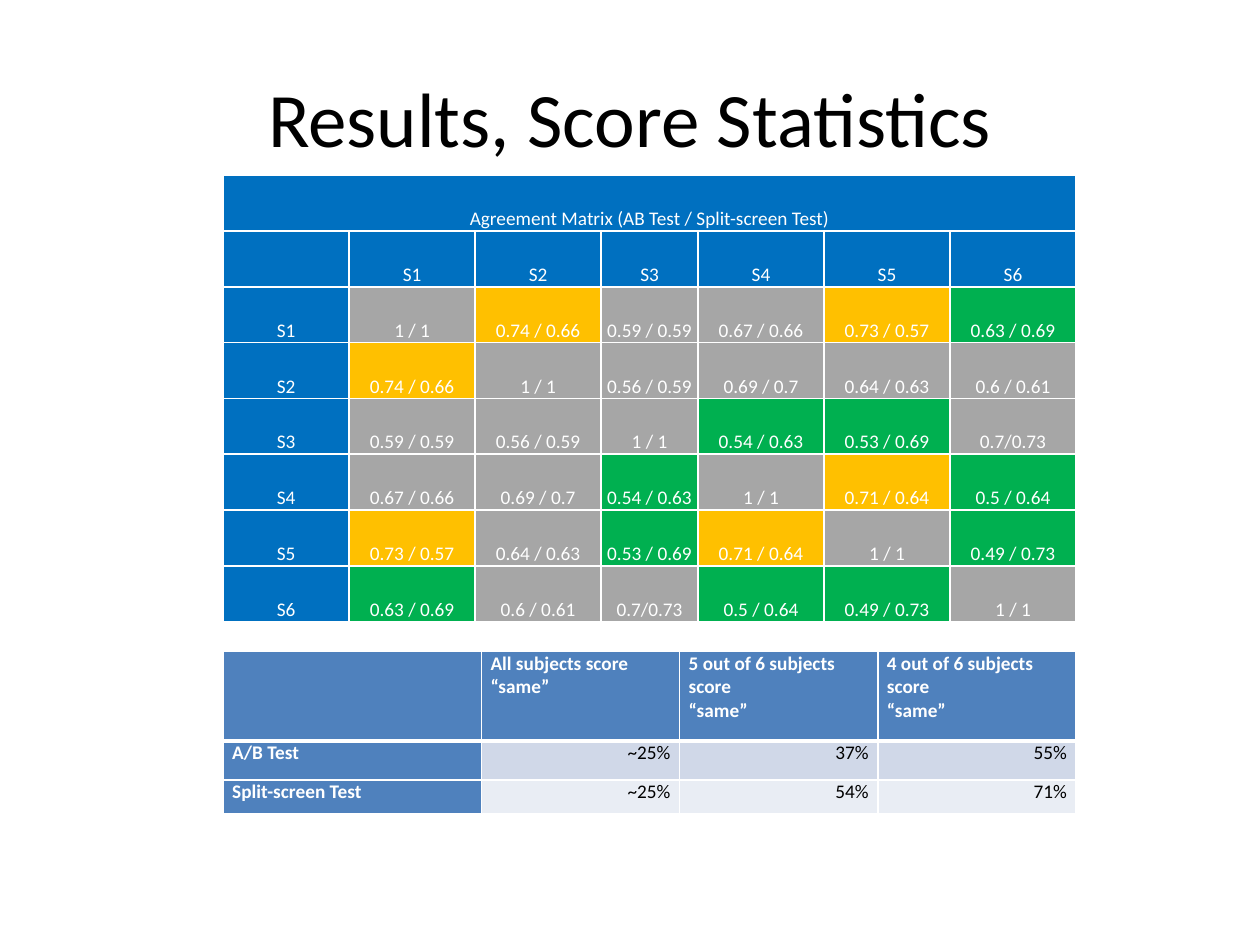
from lxml import etree
from pptx import Presentation
from pptx.dml.color import RGBColor
from pptx.enum import text
from pptx.oxml.ns import qn
from pptx.util import Pt

WHITE = RGBColor(0xFF, 0xFF, 0xFF)
BLACK = RGBColor(0x00, 0x00, 0x00)
BLUE = RGBColor(0x00, 0x70, 0xC0)
GREY = RGBColor(0xA6, 0xA6, 0xA6)
GOLD = RGBColor(0xFF, 0xC0, 0x00)
GREEN = RGBColor(0x00, 0xB0, 0x50)
STEEL = RGBColor(0x4F, 0x81, 0xBD)
BANDS = [RGBColor(0xD0, 0xD8, 0xE8), RGBColor(0xE9, 0xED, 0xF4)]

LEFT, CENTER, RIGHT = (text.PP_ALIGN.LEFT, text.PP_ALIGN.CENTER,
                       text.PP_ALIGN.RIGHT)
TABLE_LEFT = 127.5

SUBJECTS = ["S1", "S2", "S3", "S4", "S5", "S6"]
# Scores above the diagonal; the matrix is symmetric.
AGREEMENT = [
    ["0.74 / 0.66", "0.59 / 0.59", "0.67 / 0.66", "0.73 / 0.57", "0.63 / 0.69"],
    ["0.56 / 0.59", "0.69 / 0.7", "0.64 / 0.63", "0.6 / 0.61"],
    ["0.54 / 0.63", "0.53 / 0.69", "0.7/0.73"],
    ["0.71 / 0.64", "0.5 / 0.64"],
    ["0.49 / 0.73"],
]
SAME_HEADINGS = ["", "All subjects score “same”",
                 "5 out of 6 subjects score\n“same”",
                 "4 out of 6 subjects score\n“same”"]
SAME_SHARES = [["A/B Test", "~25%", "37%", "55%"],
               ["Split-screen Test", "~25%", "54%", "71%"]]


def set_font(paragraph, size, color, bold=False):
    font = paragraph.font
    font.name, font.size, font.bold = "Calibri", Pt(size), bold
    font.color.rgb = color


def add_title(slide, title):
    box = slide.shapes.add_textbox(Pt(36), Pt(21.6), Pt(648), Pt(90))
    frame = box.text_frame
    frame.word_wrap = True
    frame.vertical_anchor = text.MSO_ANCHOR.MIDDLE
    frame.text = title
    frame.paragraphs[0].alignment = CENTER
    set_font(frame.paragraphs[0], 44, BLACK)


def add_grid(slide, top, widths, heights):
    grid = slide.shapes.add_table(
        len(heights), len(widths), Pt(TABLE_LEFT), Pt(top),
        Pt(sum(widths)), Pt(sum(heights))).table
    for column, width in zip(grid.columns, widths):
        column.width = Pt(width)
    for row, height in zip(grid.rows, heights):
        row.height = Pt(height)
    return grid


def set_borders(cell, top=1, bottom=1):
    """Draw white cell edges with widths in points."""
    properties = cell._tc.get_or_add_tcPr()
    edges = [("a:lnL", 1), ("a:lnR", 1), ("a:lnT", top), ("a:lnB", bottom)]
    for position, (tag, width) in enumerate(edges):
        line = etree.Element(qn(tag), w=str(Pt(width)))
        fill = etree.SubElement(line, qn("a:solidFill"))
        etree.SubElement(fill, qn("a:srgbClr"), val=str(WHITE))
        properties.insert(position, line)


def fill_cell(cell, words, fill, color=WHITE, bold=False, align=CENTER,
              anchor=text.MSO_ANCHOR.BOTTOM, side=0.7, upper=0.7):
    cell.fill.solid()
    cell.fill.fore_color.rgb = fill
    cell.margin_left = cell.margin_right = Pt(side)
    cell.margin_top, cell.margin_bottom = Pt(upper), Pt(0)
    cell.vertical_anchor = anchor
    cell.text = words
    for paragraph in cell.text_frame.paragraphs:
        paragraph.alignment = align
        set_font(paragraph, 11, color, bold)


def agreement(row, column):
    if row == column:
        return "1 / 1"
    first, second = sorted((row, column))
    return AGREEMENT[first][second - first - 1]


def agreement_color(score):
    """Gold where the AB test agrees clearly more, green where split-screen does."""
    ab, split = map(float, score.split("/"))
    if ab - split > 0.05:
        return GOLD
    return GREEN if split - ab > 0.05 else GREY


def add_agreement_matrix(slide):
    grid = add_grid(slide, 100.1, [72, 72, 72, 55.4, 72, 72, 72], [31.9] * 8)
    for cell in grid.iter_cells():
        set_borders(cell)
    grid.cell(0, 0).merge(grid.cell(0, 6))
    fill_cell(grid.cell(0, 0), "Agreement Matrix (AB Test / Split-screen Test)",
              BLUE)
    fill_cell(grid.cell(1, 0), "", BLUE)
    for row, subject in enumerate(SUBJECTS):
        fill_cell(grid.cell(1, row + 1), subject, BLUE)
        fill_cell(grid.cell(row + 2, 0), subject, BLUE)
        for column in range(len(SUBJECTS)):
            score = agreement(row, column)
            fill_cell(grid.cell(row + 2, column + 1), score,
                      agreement_color(score))


def add_same_score_table(slide):
    grid = add_grid(slide, 372.3, [147.6] + [113.25] * 3, [51.2, 22.3, 19.2])
    for row, entries in enumerate([SAME_HEADINGS] + SAME_SHARES):
        for column, words in enumerate(entries):
            cell = grid.cell(row, column)
            set_borders(cell, top=3 if row == 1 else 1,
                        bottom=3 if row == 0 else 1)
            heading = row == 0 or column == 0
            fill_cell(cell, words, STEEL if heading else BANDS[row - 1],
                      color=WHITE if heading else BLACK, bold=heading,
                      align=LEFT if heading else RIGHT,
                      anchor=text.MSO_ANCHOR.TOP, side=5.2, upper=0)


def main():
    deck = Presentation()
    deck.slide_width, deck.slide_height = Pt(720), Pt(540)
    slide = deck.slides.add_slide(deck.slide_layouts[6])
    add_title(slide, "Results, Score Statistics")
    add_agreement_matrix(slide)
    add_same_score_table(slide)
    deck.save("out.pptx")


if __name__ == "__main__":
    main()
